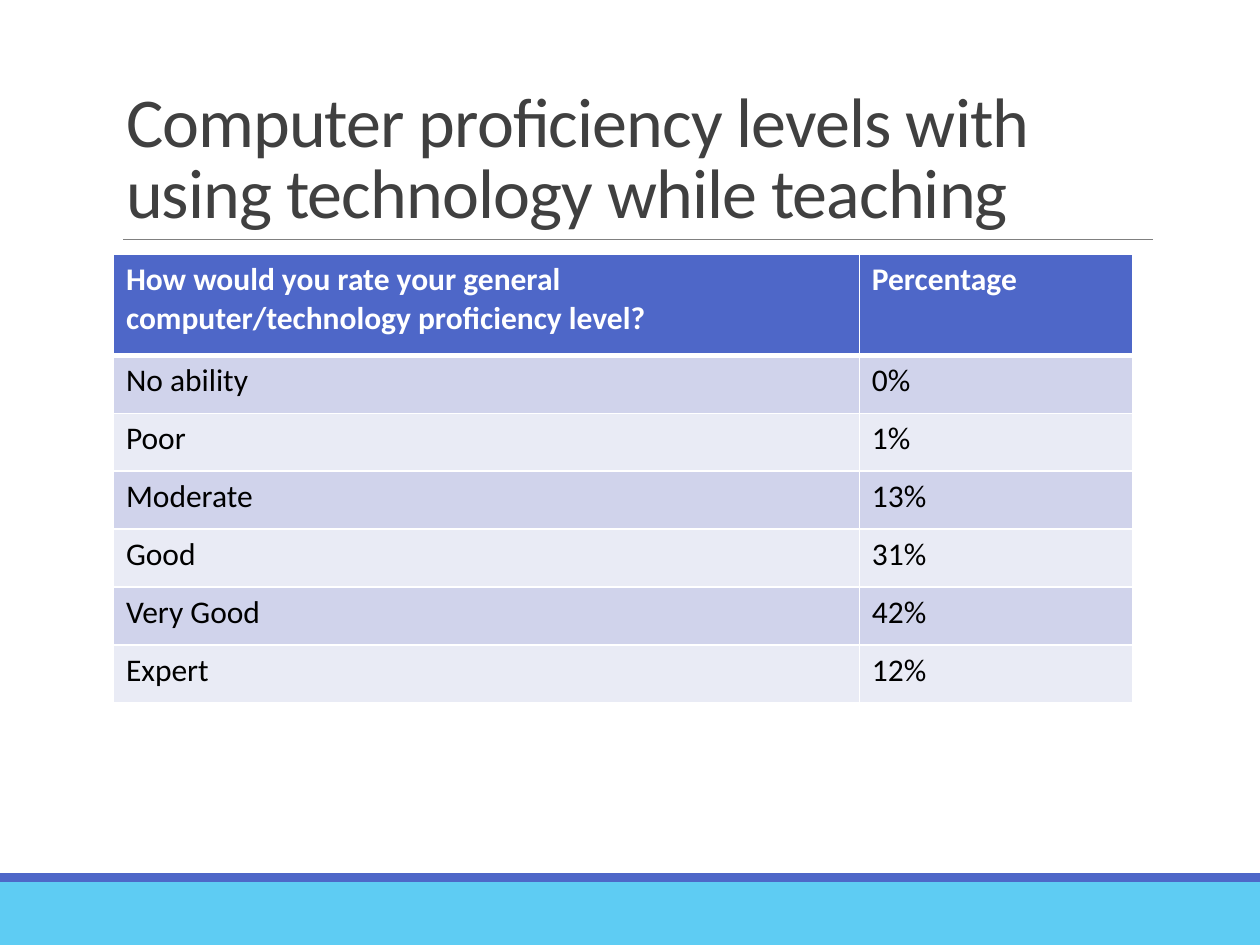
from typing import NamedTuple

from lxml import etree
from pptx import Presentation
from pptx.dml.color import RGBColor
from pptx.enum import shapes, text
from pptx.oxml import ns
from pptx.util import Inches, Pt

FONT = "Calibri"
WHITE, BLACK, BLUE, SKY = "FFFFFF", "000000", "4E67C8", "5ECCF3"
BANDS = ("D0D3EB", "E9EBF5")
COLUMN_WIDTHS = (5.92, 2.17)
HEADER_HEIGHT, ROW_HEIGHT = 0.8, 0.46


class Bar(NamedTuple):
    top: float
    height: float
    color: str


class Level(NamedTuple):
    label: str
    percentage: str


FOOTER_BARS = (Bar(7, 0.5, SKY), Bar(6.93, 0.07, BLUE))
LEVELS = (
    Level("How would you rate your general computer/technology proficiency level?",
          "Percentage"),
    Level("No ability", "0%"),
    Level("Poor", "1%"),
    Level("Moderate", "13%"),
    Level("Good", "31%"),
    Level("Very Good", "42%"),
    Level("Expert", "12%"),
)


def rgb(color: str) -> RGBColor:
    return RGBColor.from_string(color)


def format_font(font, color: str, **values) -> None:
    for name, value in {"name": FONT, **values}.items():
        setattr(font, name, value)
    font.color.rgb = rgb(color)


def add_bar(slide, bar: Bar) -> None:
    shape = slide.shapes.add_shape(shapes.MSO_SHAPE.RECTANGLE, 0, Inches(bar.top),
                                   Inches(10), Inches(bar.height))
    shape.shadow.inherit = False
    shape.fill.solid()
    shape.fill.fore_color.rgb = rgb(bar.color)
    shape.line.fill.background()


def add_rule(slide) -> None:
    rule = slide.shapes.add_connector(shapes.MSO_CONNECTOR.STRAIGHT, Inches(0.98),
                                      Inches(1.9), Inches(9.15), Inches(1.9))
    rule.line.color.rgb = rgb("808080")
    rule.line.width = Pt(0.5)
    etree.SubElement(rule._element.spPr, ns.qn("a:effectLst"))


def set_title(title, wording: str) -> None:
    box = {"left": 0.9, "top": 0.31, "width": 8.25, "height": 1.59}
    for name, value in box.items():
        setattr(title, name, Inches(value))
    frame = title.text_frame
    frame.text = wording
    for name, value in {"vertical_anchor": text.MSO_ANCHOR.BOTTOM, "word_wrap": True,
                        "auto_size": text.MSO_AUTO_SIZE.NONE}.items():
        setattr(frame, name, value)
    paragraph = frame.paragraphs[0]
    paragraph.alignment = text.PP_ALIGN.LEFT
    paragraph.line_spacing = 0.85
    run = paragraph.runs[0]
    format_font(run.font, "404040", size=Pt(40))
    run.font._element.set("spc", "-50")


def set_borders(cell, **widths: float) -> None:
    """Draw white borders on a cell, with widths in points by side (L, R, T, B)."""
    properties = cell._tc.get_or_add_tcPr()
    for side, width in widths.items():
        line = etree.SubElement(properties, ns.qn(f"a:ln{side}"), w=str(Pt(width)))
        fill = etree.SubElement(line, ns.qn("a:solidFill"))
        etree.SubElement(fill, ns.qn("a:srgbClr"), val=WHITE)


def fill_cell(cell, wording: str, row: int) -> None:
    header = row == 0
    set_borders(cell, L=1, R=1, T=3 if row == 1 else 1, B=3 if header else 1)
    cell.fill.solid()
    cell.fill.fore_color.rgb = rgb(BLUE if header else BANDS[(row - 1) % 2])
    cell.text = wording
    format_font(cell.text_frame.paragraphs[0].runs[0].font,
                WHITE if header else BLACK, size=Pt(18), bold=header)


def add_level_table(slide) -> None:
    height = HEADER_HEIGHT + ROW_HEIGHT * (len(LEVELS) - 1)
    table = slide.shapes.add_table(
        len(LEVELS), len(COLUMN_WIDTHS), Inches(0.9), Inches(2.02),
        Inches(sum(COLUMN_WIDTHS)), Inches(height)).table
    for column, width in zip(table.columns, COLUMN_WIDTHS):
        column.width = Inches(width)
    for row, level in enumerate(LEVELS):
        table.rows[row].height = Inches(ROW_HEIGHT if row else HEADER_HEIGHT)
        for column, wording in enumerate(level):
            fill_cell(table.cell(row, column), wording, row)


def main() -> None:
    presentation = Presentation()
    presentation.slide_width = Inches(10)
    presentation.slide_height = Inches(7.5)
    slide = presentation.slides.add_slide(presentation.slide_layouts[5])
    for bar in FOOTER_BARS:
        add_bar(slide, bar)
    add_rule(slide)
    set_title(slide.shapes.title,
              "Computer proficiency levels with using technology while teaching")
    add_level_table(slide)
    presentation.save("out.pptx")


if __name__ == "__main__":
    main()
